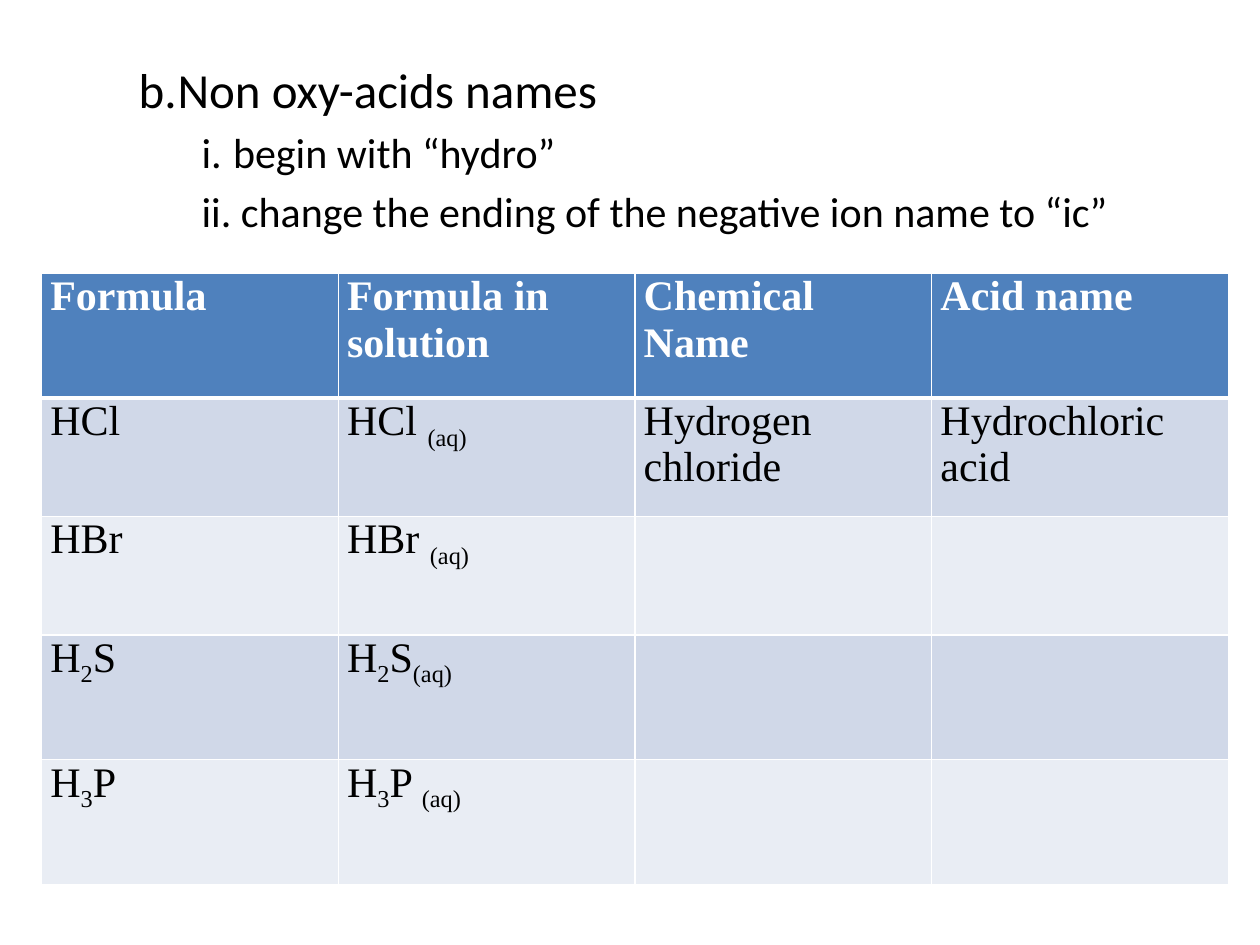
"""Build a slide on naming non oxy-acids, with a table of formulas and names."""
from lxml import etree
from pptx import Presentation
from pptx import util as u
from pptx.dml import color
from pptx.enum import text
from pptx.oxml import ns

PX = 9144
COLORS = {"ink": "000000", "white": "FFFFFF", "header": "4F81BD",
          "odd": "D0D8E8", "even": "E9EDF4"}


def write(para, content, font="Calibri", size=24, ink="ink", bold=False):
    """Add text to a paragraph; parts between tildes become subscripts."""
    for index, part in enumerate(content.split("~")):
        if not part:
            continue
        span = para.add_run()
        span.text = part
        span.font.name = font
        span.font.size = u.Pt(size)
        span.font.bold = bold
        span.font.color.rgb = color.RGBColor.from_string(COLORS[ink])
        if index % 2:
            span.font._element.set("baseline", "-25000")


def add_borders(cell, widths):
    """Draw white cell borders, with widths in points keyed by side."""
    properties = cell._tc.get_or_add_tcPr()
    for side, width in widths.items():
        line = etree.SubElement(properties, ns.qn(f"a:ln{side}"), w=str(u.Pt(width)))
        fill = etree.SubElement(line, ns.qn("a:solidFill"))
        etree.SubElement(fill, ns.qn("a:srgbClr"), val=COLORS["white"])


deck = Presentation()
deck.slide_width, deck.slide_height = 1000 * PX, 750 * PX
page = deck.slides.add_slide(deck.slide_layouts[1])
title = page.shapes.title
title._element.getparent().remove(title._element)

body = page.placeholders[1]
body.left, body.top, body.width, body.height = 50 * PX, 42 * PX, 900 * PX, 158 * PX
frame = body.text_frame
frame.word_wrap = True
frame.auto_size = text.MSO_AUTO_SIZE.NONE

rules = [
    ("b.\tNon oxy-acids names", 1, 28, 81, -31),
    ("i.\tbegin with “hydro”", 2, 24, 125, -25),
    ("ii. change the ending of the negative ion name to “ic”", 2, 24, 125, -25),
]
for index, (content, level, size, margin, indent) in enumerate(rules):
    para = frame.add_paragraph() if index else frame.paragraphs[0]
    para.level = level
    properties = para._p.get_or_add_pPr()
    properties.set("marL", str(margin * PX))
    properties.set("indent", str(indent * PX))
    etree.SubElement(properties, ns.qn("a:buNone"))
    write(para, content, size=size)

rows = [
    ["Formula", "Formula in solution", "Chemical Name", "Acid name"],
    ["HCl", "HCl ~(aq)~", "Hydrogen chloride", "Hydrochloric acid"],
    ["HBr", "HBr ~(aq)~", "", ""],
    ["H~2~S", "H~2~S~(aq)~", "", ""],
    ["H~3~P", "H~3~P ~(aq)~", "", ""],
]
heights = [99, 94, 94, 99, 99]
table = page.shapes.add_table(len(rows), 4, 33 * PX, 217 * PX,
                              942 * PX, sum(heights) * PX).table
for column in table.columns:
    column.width = 942 * PX // 4
for number, (row, height) in enumerate(zip(rows, heights)):
    table.rows[number].height = height * PX
    header = number == 0
    shade = "header" if header else "odd" if number % 2 else "even"
    for cell, content in zip(table.rows[number].cells, row):
        cell.margin_left = cell.margin_right = 7 * PX
        cell.margin_top = cell.margin_bottom = 0
        add_borders(cell, {"L": 1, "R": 1, "T": 3 if number == 1 else 1,
                           "B": 3 if header else 1})
        cell.fill.solid()
        cell.fill.fore_color.rgb = color.RGBColor.from_string(COLORS[shade])
        write(cell.text_frame.paragraphs[0], content, font="Times New Roman",
              ink="white" if header else "ink", bold=header)

deck.save("out.pptx")
